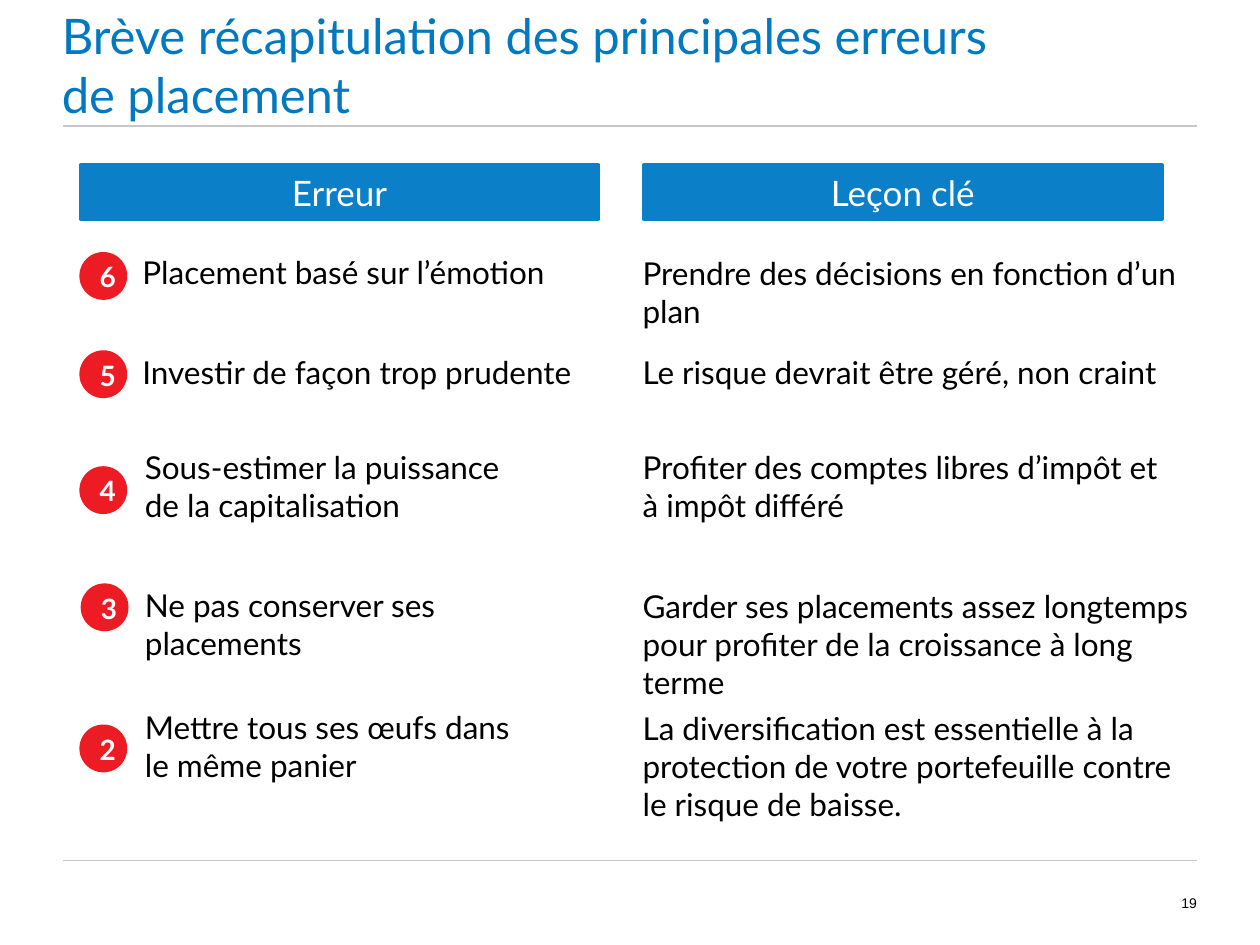
from dataclasses import dataclass

import pptx
import pptx.dml.color
import pptx.enum.shapes
import pptx.enum.text
import pptx.util
from lxml import etree

ALIGN = pptx.enum.text.PP_ALIGN
ANCHOR = pptx.enum.text.MSO_ANCHOR
SHAPE = pptx.enum.shapes.MSO_SHAPE

BLUE, TITLE_BLUE, RED = "0B7FC8", "0079C1", "ED1C24"
GREY, BLACK, WHITE = "C8C8C8", "000000", "FFFFFF"

# The slide is a grid of 100 columns by 75 rows of square cells
COLUMNS, ROWS = 100, 75
CELL = pptx.util.Inches(0.1)
MARGIN = 5
LESSON_LEFT = 50.1
BADGE_SIZE = 3.8
TEXT_INSETS = (0.9, 0.5)


@dataclass
class Area:
    left: float
    top: float
    width: float
    height: float

    def emu(self) -> list[int]:
        return [cells(n) for n in (self.left, self.top, self.width, self.height)]


@dataclass
class Mistake:
    number: str
    badge: tuple[float, float]
    error: str
    error_area: Area
    lesson: str
    lesson_area: Area


MISTAKES = [
    Mistake("6", (6.3, 20), "Placement basé sur l’émotion", Area(10.4, 19.6, 38.9, 4),
            "Prendre des décisions en fonction d’un plan",
            Area(LESSON_LEFT, 19.7, 48, 4)),
    Mistake("5", (6.3, 27.8), "Investir de façon trop prudente", Area(10.4, 27.5, 40.3, 4),
            "Le risque devrait être géré, non craint",
            Area(LESSON_LEFT, 27.5, 49.3, 4)),
    Mistake("4", (6.3, 37), "Sous-estimer la puissance de la capitalisation",
            Area(10.6, 35.1, 31.3, 7),
            "Profiter des comptes libres d’impôt et à impôt différé",
            Area(LESSON_LEFT, 35.1, 43.2, 7)),
    Mistake("3", (6.4, 46.3), "Ne pas conserver ses placements", Area(10.6, 46, 36.9, 4),
            "Garder ses placements assez longtemps pour profiter de la croissance à long terme",
            Area(LESSON_LEFT, 46.1, 46.3, 7)),
    Mistake("2", (6.3, 57.5), "Mettre tous ses œufs dans le même panier",
            Area(10.6, 55.7, 31.2, 7),
            "La diversification est essentielle à la protection de votre portefeuille "
            "contre le risque de baisse.",
            Area(LESSON_LEFT, 55.8, 44.9, 10)),
]


def cells(count: float) -> int:
    return round(count * CELL)


def colour(value: str) -> pptx.dml.color.RGBColor:
    return pptx.dml.color.RGBColor.from_string(value)


def write(holder, text: str, size: float, ink: str, align=ALIGN.LEFT, anchor=ANCHOR.TOP,
          font: str = "Lato", bold: bool = False, insets: tuple[float, float] = (0, 0)) -> None:
    frame = holder.text_frame
    frame.text = text
    frame.word_wrap = True
    frame.vertical_anchor = anchor
    frame.margin_left = frame.margin_right = cells(insets[0])
    frame.margin_top = frame.margin_bottom = cells(insets[1])
    paragraph = frame.paragraphs[0]
    paragraph.alignment = align
    for run in paragraph.runs:
        run.font.name = font
        run.font.size = pptx.util.Pt(size)
        run.font.bold = bold
        run.font.color.rgb = colour(ink)


def add_text(shapes, area: Area, text: str, size: float, ink: str, **style) -> None:
    write(shapes.add_textbox(*area.emu()), text, size, ink, **style)


def add_filled(shapes, kind, area: Area, fill: str):
    shape = shapes.add_shape(kind, *area.emu())
    shape.shadow.inherit = False
    shape.fill.solid()
    shape.fill.fore_color.rgb = colour(fill)
    shape.line.fill.background()
    return shape


def add_rule(shapes, row: float) -> None:
    rule = shapes.add_connector(pptx.enum.shapes.MSO_CONNECTOR.STRAIGHT, cells(MARGIN),
                                cells(row), cells(COLUMNS - MARGIN), cells(row))
    rule.line.color.rgb = colour(GREY)
    rule.line.width = pptx.util.Pt(0.75)
    etree.SubElement(rule._element.spPr, pptx.oxml.ns.qn("a:effectLst"))


def add_heading(shapes, left: float, text: str) -> None:
    heading = add_filled(shapes, SHAPE.RECTANGLE, Area(left, 13.1, 41.1, 4.3), BLUE)
    heading.line.color.rgb = colour(BLUE)
    heading.line.width = pptx.util.Pt(2.25)
    write(heading, text, 20, WHITE, align=ALIGN.CENTER, anchor=ANCHOR.MIDDLE,
          insets=TEXT_INSETS)


def add_badge(shapes, left: float, top: float, number: str) -> None:
    badge = shapes.add_group_shape()
    add_filled(badge.shapes, SHAPE.OVAL, Area(left, top, BADGE_SIZE, BADGE_SIZE), RED)
    add_text(badge.shapes, Area(left + 1.6, top + 0.1, 0.7, 3.7), number, 16, WHITE,
             align=ALIGN.CENTER, anchor=ANCHOR.MIDDLE, bold=True)


def main() -> None:
    deck = pptx.Presentation()
    deck.slide_width, deck.slide_height = COLUMNS * CELL, ROWS * CELL
    shapes = deck.slides.add_slide(deck.slide_layouts[6]).shapes

    # Rules, page number and title
    for row in (10, 68.3):
        add_rule(shapes, row)
    add_text(shapes, Area(90, 68.3, 5, 6.7), "19", 8, BLACK,
             align=ALIGN.RIGHT, anchor=ANCHOR.MIDDLE, font="Arial")
    add_text(shapes, Area(4.9, 0.1, 74.9, 10),
             "Brève récapitulation des principales erreurs de placement",
             28, TITLE_BLUE, anchor=ANCHOR.MIDDLE)

    # Column headings
    add_heading(shapes, 6.4, "Erreur")
    add_heading(shapes, 51.1, "Leçon clé")

    # Numbered mistakes with their lessons
    for mistake in MISTAKES:
        add_badge(shapes, *mistake.badge, mistake.number)
        add_text(shapes, mistake.error_area, mistake.error, 18, BLACK, insets=TEXT_INSETS)
        add_text(shapes, mistake.lesson_area, mistake.lesson, 18, BLACK, insets=TEXT_INSETS)

    deck.save("out.pptx")


if __name__ == "__main__":
    main()
